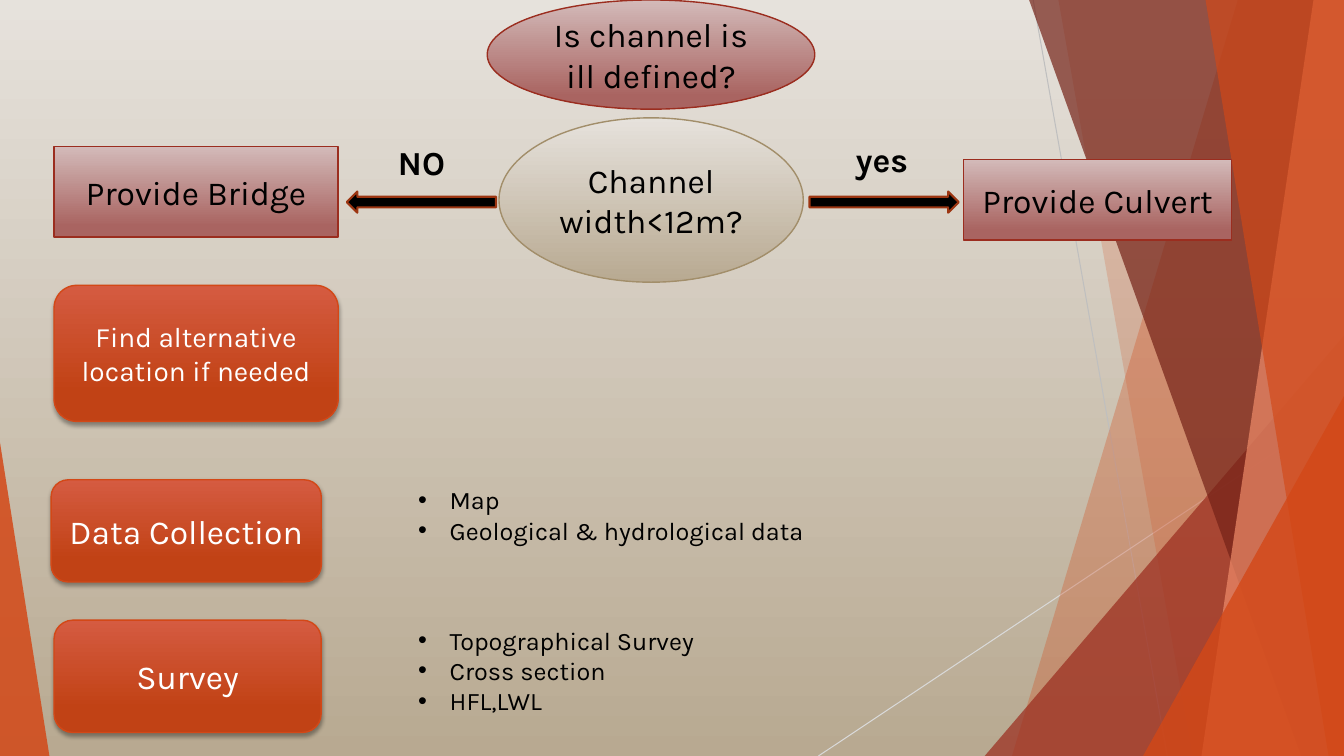
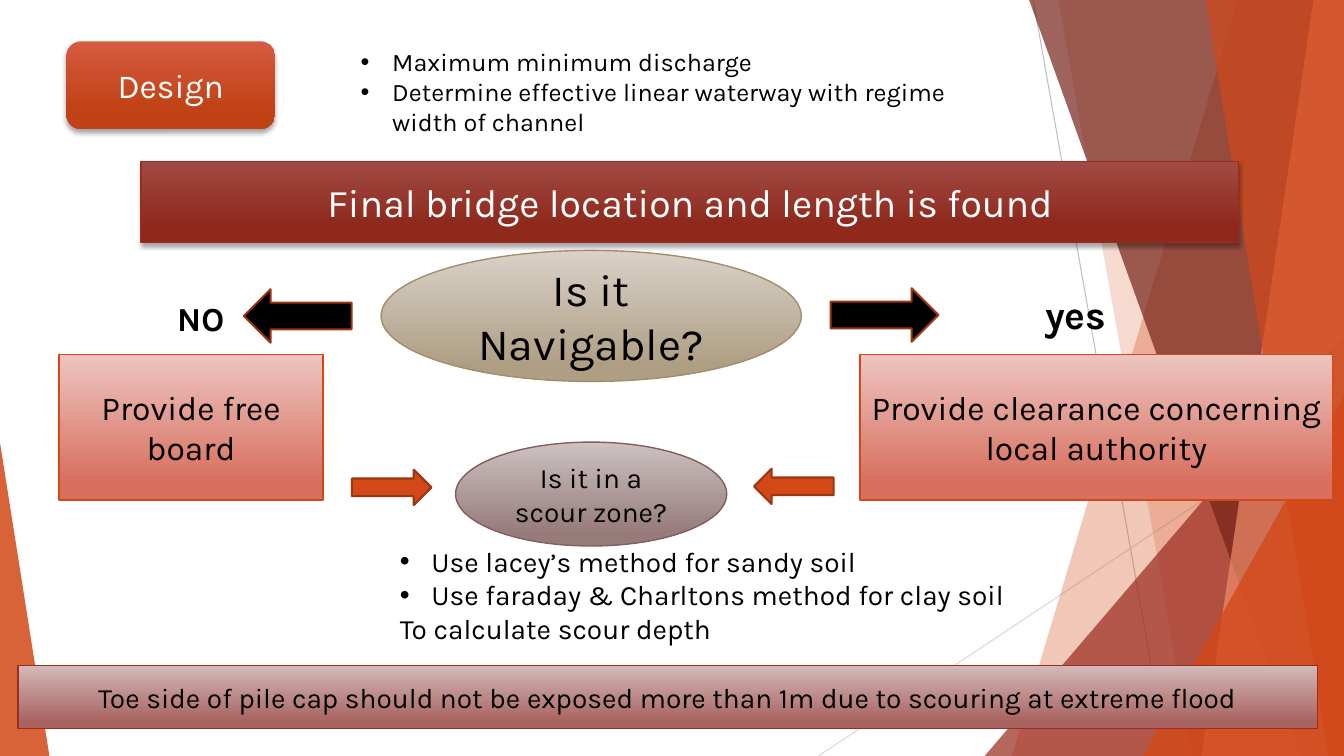
from lxml.etree import SubElement
from pptx import Presentation
from pptx.dml.color import RGBColor
from pptx.enum.shapes import MSO_CONNECTOR, MSO_SHAPE
from pptx.enum.text import MSO_ANCHOR, PP_ALIGN
from pptx.oxml.ns import qn
from pptx.util import Pt

WIDTH, HEIGHT = 960, 540
FONT = "Karla"
COLORS = {
    "black": "000000", "white": "FFFFFF", "orange": "D34817", "red": "9B2D1F",
    "maroon": "742217", "peach": "EF8C6A", "tan": "A28E6A", "plum": "855D5D",
    "arrow edge": "9C3511", "text edge": "918485",
    "grey": "BFBFBF", "light grey": "D9D9D9",
}
GRADIENTS = {
    "sand": ("E6E2DC", "B8A991", 1),
    "dark sand": ("D9D2C8", "AE9E84", 0.88),
    "rose": ("D3BAB9", "A96461", 0.88),
    "salmon": ("EDC5C0", "D86F5F", 0.88),
    "mauve": ("CCC2C2", "977B7B", 0.88),
    "orange": ("D55B41", "C14215", 0.78),
    "red": ("A14A44", "8E291C", 0.78),
}


class FlowDeck:
    """Builds flowchart slides that share one faceted style."""

    def __init__(self):
        self.deck = Presentation()
        self.deck.slide_width, self.deck.slide_height = Pt(WIDTH), Pt(HEIGHT)
        self.page = None

    def color(self, name):
        return RGBColor.from_string(COLORS[name])

    def paint_solid(self, fill, name):
        fill.solid()
        fill.fore_color.rgb = self.color(name)

    def paint_gradient(self, fill, name):
        start, end, reach = GRADIENTS[name]
        fill.gradient()
        fill.gradient_angle = 270
        first, last = fill.gradient_stops
        first.color.rgb = RGBColor.from_string(start)
        last.color.rgb = RGBColor.from_string(end)
        first.position, last.position = 0, reach

    def outline(self, line, name, width=1):
        if name:
            line.color.rgb = self.color(name)
            line.width = Pt(width)
        else:
            line.fill.background()

    def add_page(self, gradient=None):
        self.page = self.deck.slides.add_slide(self.deck.slide_layouts[6])
        fill = self.page.background.fill
        if gradient:
            self.paint_gradient(fill, gradient)
        else:
            self.paint_solid(fill, "white")
        self.facets()

    def facets(self):
        self.hairline((738, 0), (833.8, HEIGHT), "grey")
        self.hairline((WIDTH, 290.2), (584.6, HEIGHT), "light grey")
        self.band(884.2, 722.9, "orange", 30)
        self.band(756, 851.8, "orange", 20)
        self.wedge(703.4, 239.8, 256.6, 1, "red", 72)
        self.band(735.1, 929.5, "maroon", 70)
        self.band(938.2, 858.2, "peach", 70)
        self.band(861.1, 949, "orange", 65)
        self.wedge(816.5, 283, 143.5, 1, "orange", 80)
        self.wedge(0, 316.1, 35.3, 0, "orange", 85)

    def hairline(self, start, end, name):
        line = self.page.shapes.add_connector(
            MSO_CONNECTOR.STRAIGHT, *map(Pt, start + end))
        self.outline(line.line, name, 0.75)
        SubElement(line.element.spPr, qn("a:effectLst"))

    def band(self, top_left, bottom_left, name, opacity):
        builder = self.page.shapes.build_freeform(Pt(top_left), 0)
        corners = [(WIDTH, 0), (WIDTH, HEIGHT), (bottom_left, HEIGHT)]
        builder.add_line_segments([(Pt(x), Pt(y)) for x, y in corners])
        self.glaze(builder.convert_to_shape(), name, opacity)

    def wedge(self, left, top, width, apex, name, opacity):
        triangle = self.shape(MSO_SHAPE.ISOSCELES_TRIANGLE,
                              (left, top, width, HEIGHT - top))
        triangle.adjustments[0] = apex
        self.glaze(triangle, name, opacity)

    def glaze(self, shape, name, opacity):
        shape.shadow.inherit = False
        self.paint_solid(shape.fill, name)
        self.outline(shape.line, None)
        tint = shape.element.spPr.find(qn("a:solidFill"))[0]
        SubElement(tint, qn("a:alpha"), val=str(opacity * 1000))

    def shape(self, kind, place):
        shape = self.page.shapes.add_shape(kind, *map(Pt, place))
        shape.shadow.inherit = False
        return shape

    def style(self, para, size, name="black", bold=False):
        para.font.name, para.font.size = FONT, Pt(size)
        para.font.bold = bold
        para.font.color.rgb = self.color(name)

    def box(self, kind, place, text, gradient, edge, size=24, ink="black"):
        box = self.shape(kind, place)
        self.paint_gradient(box.fill, gradient)
        self.outline(box.line, edge)
        frame = box.text_frame
        frame.word_wrap = True
        frame.vertical_anchor = MSO_ANCHOR.MIDDLE
        frame.text = text
        for para in frame.paragraphs:
            para.alignment = PP_ALIGN.CENTER
            self.style(para, size, ink)
        return box

    def result(self, place, text, size=24, gradient="rose", edge="red"):
        self.box(MSO_SHAPE.RECTANGLE, place, text, gradient, edge, size)

    def question(self, place, text, gradient, edge, size=24):
        self.box(MSO_SHAPE.OVAL, place, text, gradient, edge, size)

    def step(self, place, text, size=24, edge="orange", blur=3, distance=2):
        box = self.box(MSO_SHAPE.ROUNDED_RECTANGLE, place, text,
                       "orange", edge, size, "white")
        self.drop_shadow(box, blur, distance)

    def banner(self, place, text):
        box = self.box(MSO_SHAPE.RECTANGLE, place, text, "red", "red", 28, "white")
        self.drop_shadow(box, 3, 2)

    def drop_shadow(self, box, blur, distance):
        effects = box.element.spPr.find(qn("a:effectLst"))
        shadow = SubElement(effects, qn("a:outerShdw"), blurRad=str(Pt(blur)),
                            dist=str(Pt(distance)), dir="5400000", rotWithShape="0")
        tint = SubElement(shadow, qn("a:srgbClr"), val=COLORS["black"])
        SubElement(tint, qn("a:alpha"), val="35000")

    def arrow(self, place, name="black", left=False):
        kind = MSO_SHAPE.LEFT_ARROW if left else MSO_SHAPE.RIGHT_ARROW
        arrow = self.shape(kind, place)
        self.paint_solid(arrow.fill, name)
        self.outline(arrow.line, "arrow edge", 1.5)

    def label(self, place, text, size=24):
        box = self.page.shapes.add_textbox(*map(Pt, place))
        box.text_frame.word_wrap = True
        box.text_frame.text = text
        self.style(box.text_frame.paragraphs[0], size, bold=True)
        for properties in box.element.iter(qn("a:defRPr")):
            edge = SubElement(properties, qn("a:ln"), w=str(Pt(0.8)))
            properties.insert(0, edge)
            fill = SubElement(edge, qn("a:solidFill"))
            SubElement(fill, qn("a:srgbClr"), val=COLORS["text edge"])

    def bullets(self, place, items, size=18, closing=None):
        box = self.page.shapes.add_textbox(*map(Pt, place))
        frame = box.text_frame
        frame.word_wrap = True
        frame.text = "\n".join(items + ([closing] if closing else []))
        for index, para in enumerate(frame.paragraphs):
            if index < len(items):
                properties = para._p.get_or_add_pPr()
                properties.set("marL", str(Pt(22.5)))
                properties.set("indent", str(-Pt(22.5)))
                SubElement(properties, qn("a:buFont"), typeface="Arial")
                SubElement(properties, qn("a:buChar"), char="•")
            self.style(para, size)


def channel_page(flow):
    flow.add_page("sand")
    flow.question((348, 0, 234, 78), "Is channel is ill defined?", "rose", "red")
    flow.result((688.3, 113.8, 191.5, 57.6), "Provide Culvert")
    flow.result((38.6, 104.6, 203, 64.8), "Provide Bridge")
    flow.step((38.6, 203.8, 203, 97.2), "Find alternative location if needed", 20)
    flow.step((36.5, 342.7, 193, 73), "Data Collection")
    flow.bullets((291.6, 342.7, 347, 51.1), ["Map", "Geological & hydrological data"])
    flow.step((38.6, 443, 190.8, 80.2), "Survey")
    flow.bullets((291.6, 442.8, 236.9, 72.7),
                 ["Topographical Survey", "Cross section", "HFL,LWL"])
    flow.question((356.4, 84.2, 217.4, 117.4), "Channel\nwidth<12m?", "sand", "tan")
    flow.arrow((578.2, 136.8, 106.6, 15.1))
    flow.arrow((247.7, 136.8, 106.6, 15.1), left=True)
    flow.label((277.2, 97.9, 70, 36), "NO")
    flow.label((604.1, 95.8, 70, 36), "yes")


def design_page(flow):
    flow.add_page()
    flow.step((47.5, 29.5, 149, 62.6), "Design", edge=None, blur=4, distance=3)
    flow.bullets((250.6, 29.5, 449.3, 72.7), [
        "Maximum minimum discharge",
        "Determine effective linear waterway with regime width of channel"])
    flow.banner((100.8, 115.6, 784.1, 57.6), "Final bridge location and length is found")
    flow.question((272.2, 178.9, 300.2, 93.6), "Is it Navigable?",
                  "dark sand", "tan", 32)
    flow.result((614.2, 253.4, 337.7, 103.7),
                "Provide clearance concerning local authority",
                gradient="salmon", edge="orange")
    flow.result((42.2, 253.4, 188.6, 103.7), "Provide free board",
                gradient="salmon", edge="orange")
    flow.question((325.4, 315.8, 193.7, 74.2), "Is it in a scour zone?",
                  "mauve", "plum", 20)
    flow.bullets((278.6, 385.2, 586.8, 79.9), [
        "Use lacey’s method for sandy soil",
        "Use faraday & Charltons method for clay soil"],
        20, "To calculate scour depth")
    flow.result((13, 475.2, 928, 45.4),
                "Toe side of pile cap should not be exposed more than 1m "
                "due to scouring at extreme flood", 20)
    flow.arrow((593.3, 205.9, 77, 38.2))
    flow.arrow((174.2, 206.6, 77, 38.2), left=True)
    flow.label((739.4, 203.8, 86.4, 41), "yes", 28)
    flow.label((119.5, 209.5, 94.3, 36), "NO")
    flow.arrow((538.6, 334.8, 56.9, 25.2), "orange", left=True)
    flow.arrow((251.3, 335.5, 56.9, 25.2), "orange")


def main():
    flow = FlowDeck()
    channel_page(flow)
    design_page(flow)
    flow.deck.save("out.pptx")


if __name__ == "__main__":
    main()
